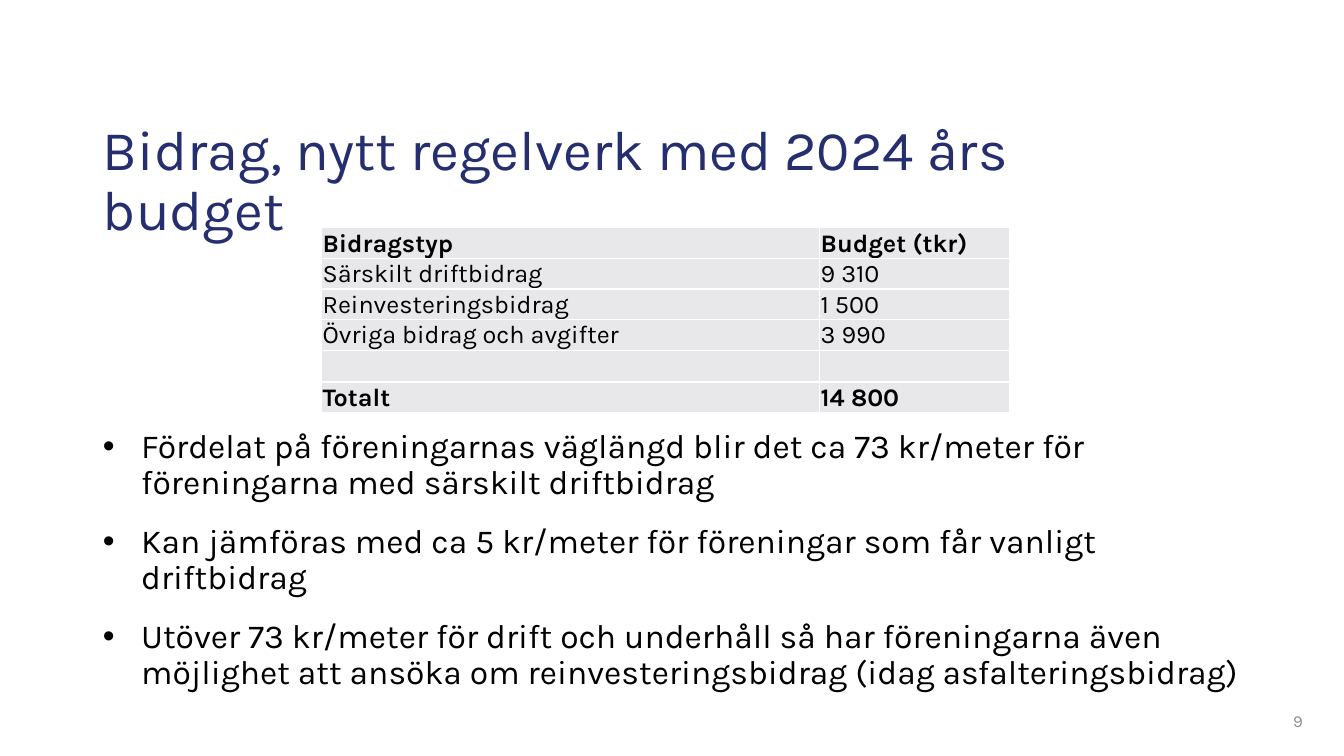
from lxml import etree
from pptx import Presentation
from pptx.dml.color import RGBColor
from pptx.enum.text import MSO_ANCHOR, MSO_AUTO_SIZE, PP_ALIGN
from pptx.oxml.ns import qn
from pptx.util import Inches, Pt

BOTTOM, MIDDLE, TOP = MSO_ANCHOR.BOTTOM, MSO_ANCHOR.MIDDLE, MSO_ANCHOR.TOP
LEFT, RIGHT = PP_ALIGN.LEFT, PP_ALIGN.RIGHT
NO_AUTOFIT = MSO_AUTO_SIZE.NONE

# Content
TITLE = "Bidrag, nytt regelverk med 2024 års budget"
BUDGET = [
    ("Bidragstyp", "Budget (tkr)"),
    ("Särskilt driftbidrag", "9 310"),
    ("Reinvesteringsbidrag", "1 500"),
    ("Övriga bidrag och avgifter", "3 990"),
    ("", ""),
    ("Totalt", "14 800"),
]
BOLD_ROWS = (0, len(BUDGET) - 1)
BULLETS = [
    "Fördelat på föreningarnas väglängd blir det ca 73 kr/meter för "
    "föreningarna med särskilt driftbidrag",
    "Kan jämföras med ca 5 kr/meter för föreningar som får vanligt driftbidrag",
    "Utöver 73 kr/meter för drift och underhåll så har föreningarna även "
    "möjlighet att ansöka om reinvesteringsbidrag (idag asfalteringsbidrag)",
]
PAGE_NUMBER = "9"

FONT = "Karla"
COLORS = {"title": "252E6F", "text": "000000", "number": "8C8C8C",
          "cell": "E8E8EB", "border": "FFFFFF"}
COLUMN_WIDTHS = (4.94, 1.88)
ROW_HEIGHT = 0.3


def place(box, left, top, width, height, anchor):
    box.left, box.top = Inches(left), Inches(top)
    box.width, box.height = Inches(width), Inches(height)
    frame = box.text_frame
    frame.word_wrap = True
    frame.auto_size = NO_AUTOFIT
    frame.vertical_anchor = anchor
    return frame


def add_text(para, text, size, color, bold=False, align=LEFT):
    para.alignment = align
    span = para.add_run()
    span.text = text
    span.font.name = FONT
    span.font.size = Pt(size)
    span.font.bold = bold
    span.font.color.rgb = RGBColor.from_string(COLORS[color])


def add_bullet(para):
    properties = para._p.get_or_add_pPr()
    properties.set("marL", str(Inches(0.38)))
    properties.set("indent", str(-Inches(0.38)))
    etree.SubElement(properties, qn("a:buFont"), typeface="Arial")
    etree.SubElement(properties, qn("a:buChar"), char="•")


def style_cell(cell):
    cell.margin_left = cell.margin_right = cell.margin_top = Inches(0.01)
    cell.margin_bottom = 0
    cell.vertical_anchor = BOTTOM
    # Borders come before the fill in the cell properties
    properties = cell._tc.get_or_add_tcPr()
    for side in ("lnL", "lnR", "lnT", "lnB"):
        line = etree.SubElement(properties, qn("a:" + side), w=str(Pt(1)))
        fill = etree.SubElement(line, qn("a:solidFill"))
        etree.SubElement(fill, qn("a:srgbClr"), val=COLORS["border"])
    cell.fill.solid()
    cell.fill.fore_color.rgb = RGBColor.from_string(COLORS["cell"])


deck = Presentation()
deck.slide_width, deck.slide_height = Inches(13.33), Inches(7.5)
page = deck.slides.add_slide(deck.slide_layouts[1])

# Title
frame = place(page.shapes.title, 0.92, 1.09, 10.25, 1.37, BOTTOM)
frame.paragraphs[0].line_spacing = 0.9
add_text(frame.paragraphs[0], TITLE, 40, "title")

# Bullet list
frame = place(page.placeholders[1], 0.92, 4.21, 11.64, 2.55, TOP)
for index, text in enumerate(BULLETS):
    para = frame.add_paragraph() if index else frame.paragraphs[0]
    add_bullet(para)
    para.line_spacing = 0.9
    para.space_before = Pt(10 if index else 0)
    para.space_after = Pt(6)
    add_text(para, text, 24, "text")

# Page number
number_box = page.shapes.add_textbox(0, 0, 0, 0)
frame = place(number_box, 10.02, 6.95, 3, 0.4, MIDDLE)
add_text(frame.paragraphs[0], PAGE_NUMBER, 12, "number", align=RIGHT)

# Budget table
table = page.shapes.add_table(
    len(BUDGET), len(COLUMN_WIDTHS), Inches(3.19), Inches(2.26),
    Inches(sum(COLUMN_WIDTHS)), Inches(ROW_HEIGHT * len(BUDGET))).table
for column, width in zip(table.columns, COLUMN_WIDTHS):
    column.width = Inches(width)
for row_index, values in enumerate(BUDGET):
    table.rows[row_index].height = Inches(ROW_HEIGHT)
    for column_index, value in enumerate(values):
        cell = table.cell(row_index, column_index)
        style_cell(cell)
        if value:
            add_text(cell.text_frame.paragraphs[0], value, 18, "text",
                     bold=row_index in BOLD_ROWS)

deck.save("out.pptx")
